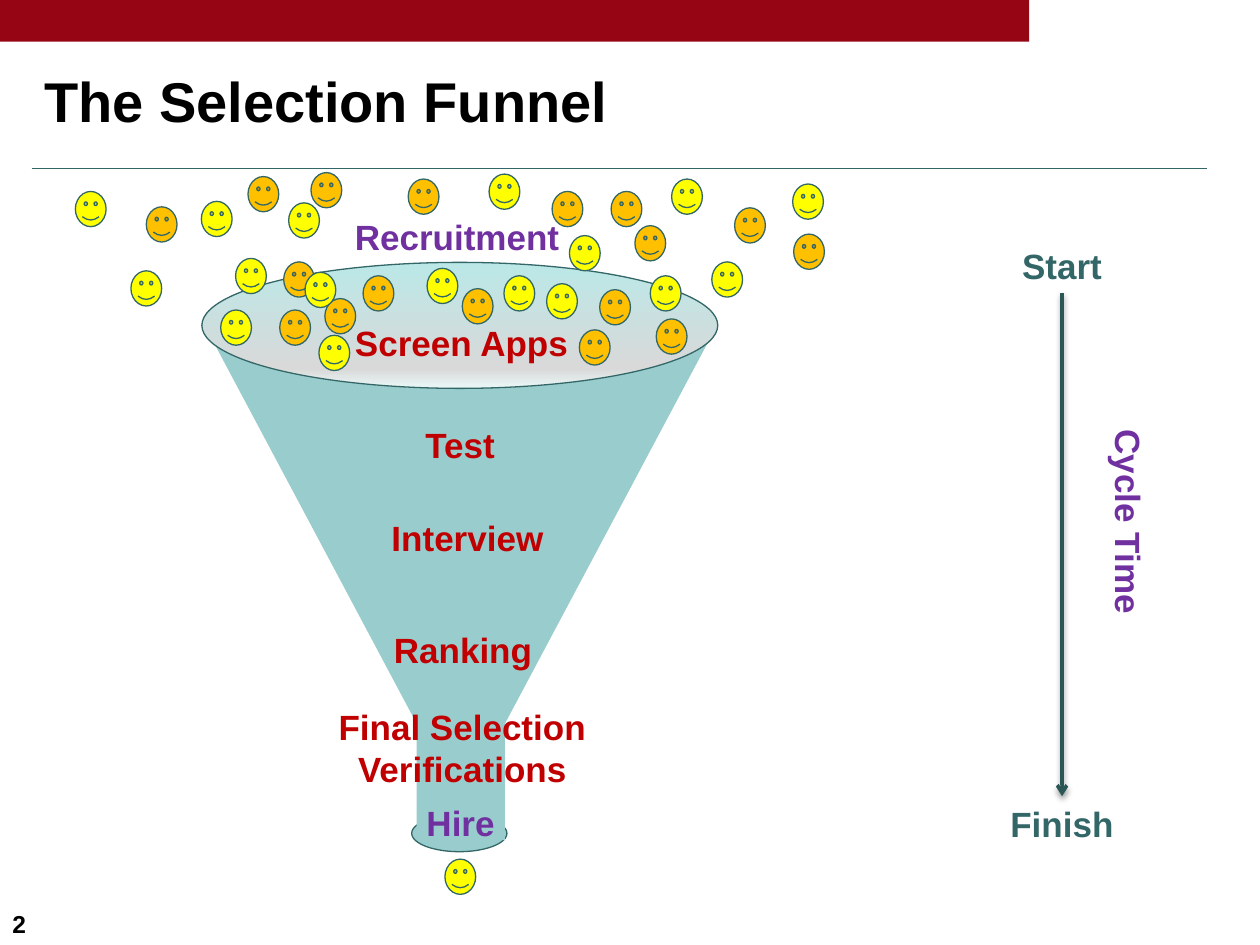
import copy
import lxml.etree
import pptx
import pptx.dml.color
import pptx.enum.dml
import pptx.enum.shapes
import pptx.enum.text
import pptx.oxml
import pptx.oxml.ns
import pptx.util

Cm = pptx.util.Cm
Pt = pptx.util.Pt
SHAPE = pptx.enum.shapes.MSO_SHAPE
ALIGN = pptx.enum.text.PP_ALIGN
qn = pptx.oxml.ns.qn

COLORS = {
    "bar": "950513", "teal": "336666", "arrow": "2A5656", "funnel": "99CCCC",
    "red": "C00000", "purple": "7030A0", "black": "000000",
    "yellow": "FFFF00", "orange": "FFC000",
    "rim_top": "BBE7E7", "rim_mid": "D9D9D9", "rim_low": "EAF7F7",
}
RGB = {name: pptx.dml.color.RGBColor.from_string(code) for name, code in COLORS.items()}

prs = pptx.Presentation()
prs.slide_width = Cm(25.4)
prs.slide_height = Cm(19.05)
slide = prs.slides.add_slide(prs.slide_layouts[5])


def add_figure(kind, left, top, width, height, fill, outlined):
    figure = slide.shapes.add_shape(kind, Cm(left), Cm(top), Cm(width), Cm(height))
    figure.shadow.inherit = False
    figure.fill.solid()
    figure.fill.fore_color.rgb = RGB[fill]
    if outlined:
        figure.line.color.rgb = RGB["teal"]
        figure.line.width = Pt(0.75)
    else:
        figure.line.fill.background()
    return figure


def write(frame, lines, size, color, align):
    for index, line in enumerate(lines):
        paragraph = frame.add_paragraph() if index else frame.paragraphs[0]
        paragraph.alignment = align
        run = paragraph.add_run()
        run.text = line
        run.font.name = "Arial"
        run.font.size = Pt(size)
        run.font.bold = True
        run.font.color.rgb = RGB[color]


add_figure(SHAPE.RECTANGLE, 0, 0, 20.75, 0.84, "bar", False)
title_rule = slide.shapes.add_connector(
    pptx.enum.shapes.MSO_CONNECTOR.STRAIGHT, Cm(0.64), Cm(3.39), Cm(24.34), Cm(3.39))
title_rule.line.color.rgb = RGB["teal"]
title_rule.line.width = Pt(0.75)
lxml.etree.SubElement(title_rule._element.spPr, qn("a:effectLst"))

title = slide.shapes.title
title.left, title.top, title.width, title.height = Cm(0.64), Cm(0.84), Cm(23.7), Cm(2.34)
title.text_frame.vertical_anchor = pptx.enum.text.MSO_ANCHOR.MIDDLE
write(title.text_frame, ["The Selection Funnel"], 32, "black", ALIGN.LEFT)

page_number = slide.shapes.add_textbox(0, Cm(18.2), Cm(3.39), Cm(0.85))
page_number.text_frame.word_wrap = True
write(page_number.text_frame, ["2"], 14, "black", ALIGN.LEFT)

add_figure(SHAPE.OVAL, 8.3, 16.43, 1.92, 0.74, "funnel", True)
add_figure(SHAPE.FLOWCHART_MERGE, 4.11, 6.53, 10.36, 9.73, "funnel", False)
add_figure(SHAPE.RECTANGLE, 8.4, 14.6, 1.78, 2.34, "funnel", False)
rim = add_figure(SHAPE.OVAL, 4.07, 5.29, 10.4, 2.54, "funnel", True)
rim.fill.gradient()
rim.fill.gradient_angle = 270
stop_list = rim._element.spPr.find(qn("a:gradFill")).find(qn("a:gsLst"))
stop_list.append(copy.deepcopy(stop_list[-1]))
for stop, (position, color) in zip(
        rim.fill.gradient_stops, [(0, "rim_top"), (0.84, "rim_mid"), (1, "rim_low")]):
    stop.position = position
    stop.color.rgb = RGB[color]

labels = {}
for lines, left, top, width, color, rotation in [
    (["Interview"], 7.62, 10.29, 3.61, "red", 0),
    (["Test"], 8.31, 8.41, 1.93, "red", 0),
    (["Screen Apps"], 6.88, 6.35, 4.85, "red", 0),
    (["Recruitment"], 6.88, 4.22, 4.67, "purple", 0),
    (["Ranking"], 7.67, 12.55, 3.33, "red", 0),
    (["Hire"], 8.33, 16.03, 1.91, "purple", 0),
    (["Final Selection", "Verifications"], 6.55, 14.1, 5.54, "red", 0),
    (["Start"], 20.35, 4.8, 2.12, "teal", 0),
    (["Finish"], 20.1, 16.05, 2.62, "teal", 0),
    (["Cycle Time"], 20.62, 9.96, 4.27, "purple", 90),
]:
    label = slide.shapes.add_textbox(
        Cm(left), Cm(top), Cm(width), Cm(1.11 + 0.85 * (len(lines) - 1)))
    label.rotation = rotation
    label.text_frame.word_wrap = False
    label.text_frame.auto_size = pptx.enum.text.MSO_AUTO_SIZE.SHAPE_TO_FIT_TEXT
    write(label.text_frame, lines, 20, color, ALIGN.CENTER)
    labels[lines[0]] = label

applicants = {
    "orange": [
        (13.23, 6.43), (6.55, 6.02), (11.68, 6.65), (8.23, 3.61), (7.32, 5.56),
        (5.64, 6.25), (5, 3.56), (12.09, 5.84), (14.81, 4.19), (11.13, 3.86),
        (12.8, 4.55), (16, 4.72), (9.32, 5.82), (12.32, 3.86), (6.27, 3.48),
        (2.95, 4.17), (5.72, 5.28),
    ],
    "yellow": [
        (2.64, 5.46), (1.52, 3.86), (4.06, 4.06), (4.75, 5.21), (13.54, 3.61),
        (10.16, 5.56), (8.97, 17.32), (9.86, 3.51), (8.61, 5.41), (15.98, 3.71),
        (13.11, 5.56), (11.02, 5.72), (4.45, 6.25), (11.48, 4.75), (5.82, 4.09),
        (14.35, 5.28), (6.43, 6.76), (6.15, 5.49),
    ],
}
for color, positions in applicants.items():
    for left, top in positions:
        add_figure(SHAPE.SMILEY_FACE, left, top, 0.62, 0.71, color, True)

cycle_arrow = slide.shapes.add_connector(
    pptx.enum.shapes.MSO_CONNECTOR.STRAIGHT, Cm(21.41), Cm(5.91), Cm(21.41), Cm(16.05))
cycle_arrow.begin_connect(labels["Start"], 2)
cycle_arrow.end_connect(labels["Finish"], 0)
cycle_arrow.line.color.rgb = RGB["arrow"]
cycle_arrow.line.width = Pt(2)
lxml.etree.SubElement(cycle_arrow.line._get_or_add_ln(), qn("a:tailEnd"), type="arrow")
effects = lxml.etree.SubElement(cycle_arrow._element.spPr, qn("a:effectLst"))
shadow = lxml.etree.SubElement(
    effects, qn("a:outerShdw"), blurRad="40000", dist="20000", dir="5400000", rotWithShape="0")
shadow_color = lxml.etree.SubElement(shadow, qn("a:srgbClr"), val=COLORS["black"])
lxml.etree.SubElement(shadow_color, qn("a:alpha"), val="38000")

prs.save("out.pptx")
